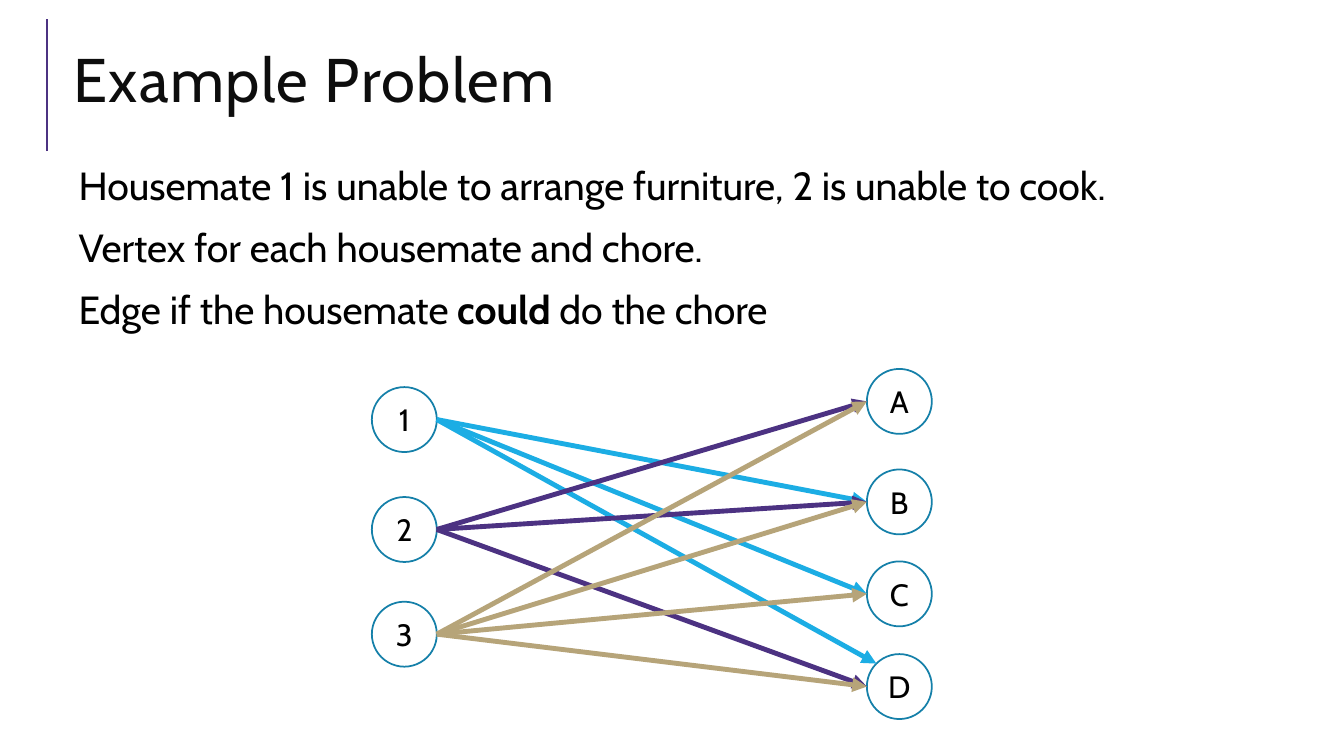
from math import cos, pi

from lxml.etree import SubElement
from pptx import Presentation
from pptx.dml.color import RGBColor
from pptx.enum.shapes import MSO_CONNECTOR, MSO_SHAPE
from pptx.enum.text import MSO_ANCHOR, PP_ALIGN
from pptx.oxml.ns import qn
from pptx.util import Pt

# Content
TITLE = "Example Problem"
BODY = [  # paragraphs of (text, bold) runs
    [("Housemate 1 is unable to arrange furniture, 2 is unable to cook.", False)],
    [("Vertex for each housemate and chore.", False)],
    [("Edge if the housemate ", False), ("could ", True), ("do the chore", False)],
]
HOUSEMATES = {"1": 276.5, "2": 355, "3": 429.8}  # label: top
CHORES = {"A": 263.5, "B": 335.3, "C": 401, "D": 467.2}
EDGES = {"1": "BCD", "2": "ABD", "3": "ABCD"}
CORNER_EDGES = {("1", "D")}  # arrows that meet the circle at its upper left

THEME = {
    "font": "Cabin",
    "title_size": 44, "body_size": 28, "node_size": 22,
    "title": "0D0D0D", "text": "000000", "rule": "4C3282", "node": "1580A9",
    "edges": {"1": "1CADE4", "2": "4C3282", "3": "B6A479"},
}

# Layout, in points
HOUSEMATE_X, CHORE_X, NODE = 265.6, 619.2, 46.4
TEXT_X, TEXT_W = 45.4, 880.6


def style(r, size, color, bold=False):
    r.font.name = THEME["font"]
    r.font.size = Pt(size)
    r.font.bold = bold
    r.font.color.rgb = RGBColor.from_string(color)


def add_text_box(s, top, height):
    tf = s.shapes.add_textbox(Pt(TEXT_X), Pt(top), Pt(TEXT_W), Pt(height)).text_frame
    tf.word_wrap = True
    return tf


def add_line(s, start, end, color, width, arrow=False):
    line = s.shapes.add_connector(MSO_CONNECTOR.STRAIGHT, *map(Pt, start + end))
    line.line.color.rgb = RGBColor.from_string(color)
    line.line.width = Pt(width)
    if arrow:
        SubElement(line.line._get_or_add_ln(), qn("a:tailEnd"), type="triangle")
    SubElement(line._element.spPr, qn("a:effectLst"))


def add_node(s, label, left, top):
    sp = s.shapes.add_shape(MSO_SHAPE.OVAL, Pt(left), Pt(top), Pt(NODE), Pt(NODE))
    sp.shadow.inherit = False
    sp.fill.background()
    sp.line.color.rgb = RGBColor.from_string(THEME["node"])
    sp.line.width = Pt(1.25)
    tf = sp.text_frame
    tf.text = label
    tf.vertical_anchor = MSO_ANCHOR.MIDDLE
    p = tf.paragraphs[0]
    p.alignment = PP_ALIGN.CENTER
    style(p.runs[0], THEME["node_size"], THEME["text"])


def main():
    prs = Presentation()
    prs.slide_width, prs.slide_height = Pt(960), Pt(540)
    s = prs.slides.add_slide(prs.slide_layouts[6])

    # Title with its vertical rule
    add_line(s, (33.8, 108), (33.8, 13.7), THEME["rule"], 1.5)
    tf = add_text_box(s, 20.9, 79.9)
    tf.text = TITLE
    tf.vertical_anchor = MSO_ANCHOR.MIDDLE
    p = tf.paragraphs[0]
    p.line_spacing = 0.8
    r = p.runs[0]
    style(r, THEME["title_size"], THEME["title"])
    r.font._element.set("spc", "100")

    # Problem statement
    tf = add_text_box(s, 115.2, 136.1)
    tf.margin_left = Pt(10.8)
    tf.margin_top = tf.margin_right = tf.margin_bottom = Pt(3.6)
    for i, runs in enumerate(BODY):
        p = tf.add_paragraph() if i else tf.paragraphs[0]
        p.line_spacing = 0.9
        p.space_before, p.space_after = Pt(12), Pt(2)
        for text, bold in runs:
            r = p.add_run()
            r.text = text
            style(r, THEME["body_size"], THEME["text"], bold)

    # Vertices
    for left, column in ((CHORE_X, CHORES), (HOUSEMATE_X, HOUSEMATES)):
        for label, top in column.items():
            add_node(s, label, left, top)

    # Edges
    radius = NODE / 2
    corner = radius * (1 - cos(pi / 4))
    for mate, chores in EDGES.items():
        start = (HOUSEMATE_X + NODE, HOUSEMATES[mate] + radius)
        for chore in chores:
            dx, dy = (corner, corner) if (mate, chore) in CORNER_EDGES else (0, radius)
            end = (CHORE_X + dx, CHORES[chore] + dy)
            add_line(s, start, end, THEME["edges"][mate], 3.5, arrow=True)

    prs.save("out.pptx")


if __name__ == "__main__":
    main()
